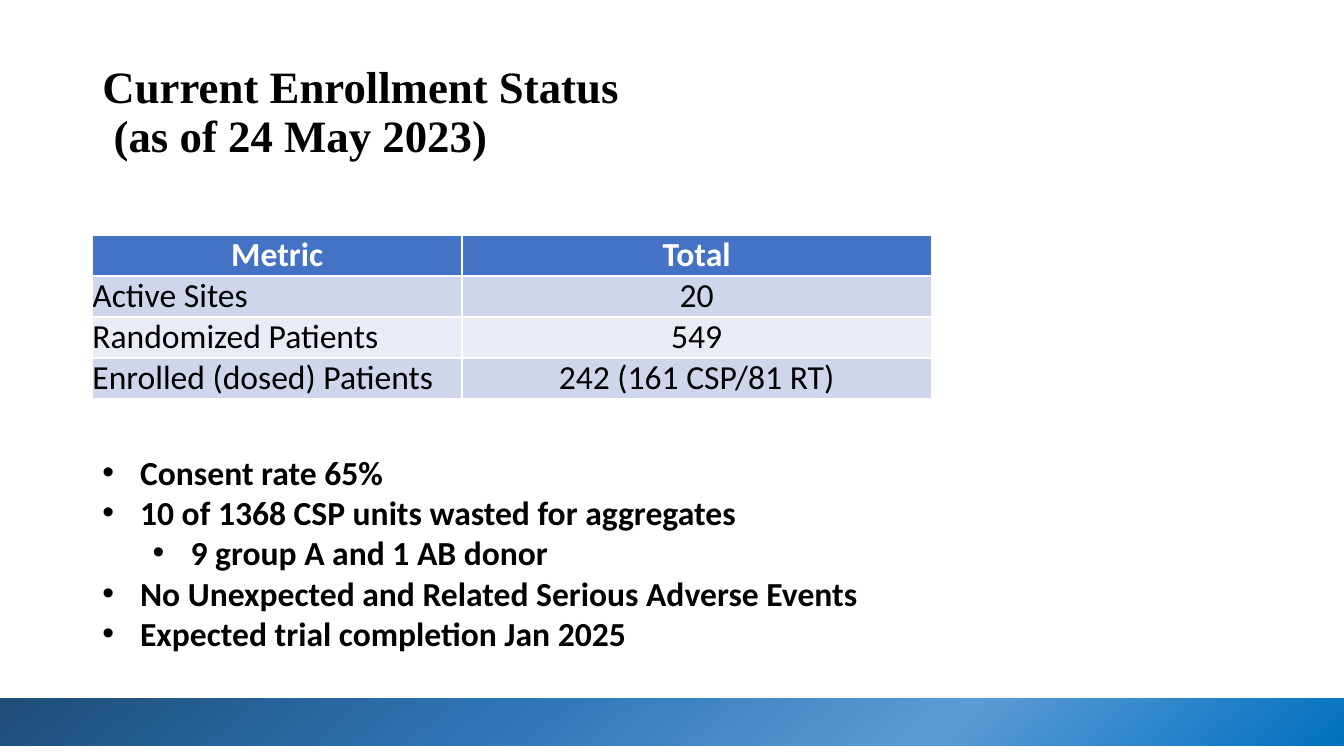
from lxml.etree import SubElement
from pptx import Presentation
from pptx.dml.color import RGBColor
from pptx.enum.shapes import MSO_SHAPE
from pptx.enum.text import MSO_ANCHOR, PP_ALIGN
from pptx.oxml import parse_xml
from pptx.oxml.ns import nsdecls, qn
from pptx.util import Pt

HEX = {
    "black": "000000", "white": "FFFFFF", "head": "4472C4",
    "odd": "CFD5EA", "even": "E9EBF5",
    "navy": "1F4E79", "blue": "2E75B6", "sky": "5B9BD5", "azure": "0070C0",
}
STOPS = [(1, "navy"), (37, "blue"), (70, "sky"), (100, "azure")]
TITLE = ["Current Enrollment Status", " (as of 24 May 2023)"]
ROWS = [
    ("Metric", "Total"),
    ("Active Sites", "20"),
    ("Randomized Patients", "549"),
    ("Enrolled (dosed) Patients", "242 (161 CSP/81 RT)"),
]
POINTS = [
    (0, "Consent rate 65%"),
    (0, "10 of 1368 CSP units wasted for aggregates"),
    (1, "9 group A and 1 AB donor"),
    (0, "No Unexpected and Related Serious Adverse Events"),
    (0, "Expected trial completion Jan 2025"),
]


def color(name):
    return RGBColor.from_string(HEX[name])


def add_run(para, text, size=24, face="Calibri", ink="black", bold=True):
    run = para.add_run()
    run.text = text
    font = run.font
    font.size, font.name, font.bold = Pt(size), face, bold
    font.color.rgb = color(ink)


def add_band(slide, box):
    """Draw the gradient strip along the foot of the slide."""
    band = slide.shapes.add_shape(MSO_SHAPE.RECTANGLE, *map(Pt, box))
    band.shadow.inherit = False
    band.line.fill.background()
    stops = "".join(
        f'<a:gs pos="{pos * 1000}"><a:srgbClr val="{HEX[name]}"/></a:gs>'
        for pos, name in STOPS)
    grad = parse_xml(
        f'<a:gradFill {nsdecls("a")} rotWithShape="1"><a:gsLst>{stops}</a:gsLst>'
        '<a:lin ang="3000000" scaled="0"/></a:gradFill>')
    band.element.spPr.find(qn("a:prstGeom")).addnext(grad)


def add_title(slide, box):
    title = slide.shapes.title
    title.left, title.top, title.width, title.height = map(Pt, box)
    frame = title.text_frame
    frame.vertical_anchor = MSO_ANCHOR.MIDDLE
    para = frame.paragraphs[0]
    para.alignment = PP_ALIGN.LEFT
    para.line_spacing = 0.9
    for i, line in enumerate(TITLE):
        if i:
            para.add_line_break()
        add_run(para, line, 32, "Times New Roman")


def add_grid(slide, box):
    """Add the enrollment table."""
    grid = slide.shapes.add_table(len(ROWS), 2, *map(Pt, box)).table
    first = 264
    grid.columns[0].width = Pt(first)
    grid.columns[1].width = Pt(box[2] - first)
    for r, row in enumerate(ROWS):
        head = r == 0
        grid.rows[r].height = Pt(box[3] / len(ROWS))
        for c, text in enumerate(row):
            cell = grid.cell(r, c)
            cell.margin_left = cell.margin_right = 0
            cell.margin_top = cell.margin_bottom = 0
            cell.vertical_anchor = MSO_ANCHOR.MIDDLE
            cell.fill.solid()
            cell.fill.fore_color.rgb = color(
                "head" if head else "odd" if r % 2 else "even")
            para = cell.text_frame.paragraphs[0]
            para.alignment = PP_ALIGN.CENTER if head or c else PP_ALIGN.LEFT
            add_run(para, text, ink="white" if head else "black", bold=head)


def add_list(slide, box):
    frame = slide.shapes.add_textbox(*map(Pt, box)).text_frame
    frame.word_wrap = True
    for i, (level, text) in enumerate(POINTS):
        para = frame.add_paragraph() if i else frame.paragraphs[0]
        para.level = level
        props = para._p.get_or_add_pPr()
        props.set("marL", str(Pt(27 + 36 * level)))
        props.set("indent", str(-Pt(27)))
        SubElement(props, qn("a:buFont")).set("typeface", "Arial")
        SubElement(props, qn("a:buChar")).set("char", "•")
        add_run(para, text)


def main():
    deck = Presentation()
    deck.slide_width, deck.slide_height = Pt(960), Pt(540)
    slide = deck.slides.add_slide(deck.slide_layouts[5])
    left = 66
    add_band(slide, (0, 498.7, 960, 34))
    add_title(slide, (left, 28.75, 828, 104.4))
    add_grid(slide, (left, 167.8, 599.3, 116.8))
    add_list(slide, (left, 319, 572, 152.6))
    deck.save("out.pptx")


if __name__ == "__main__":
    main()
